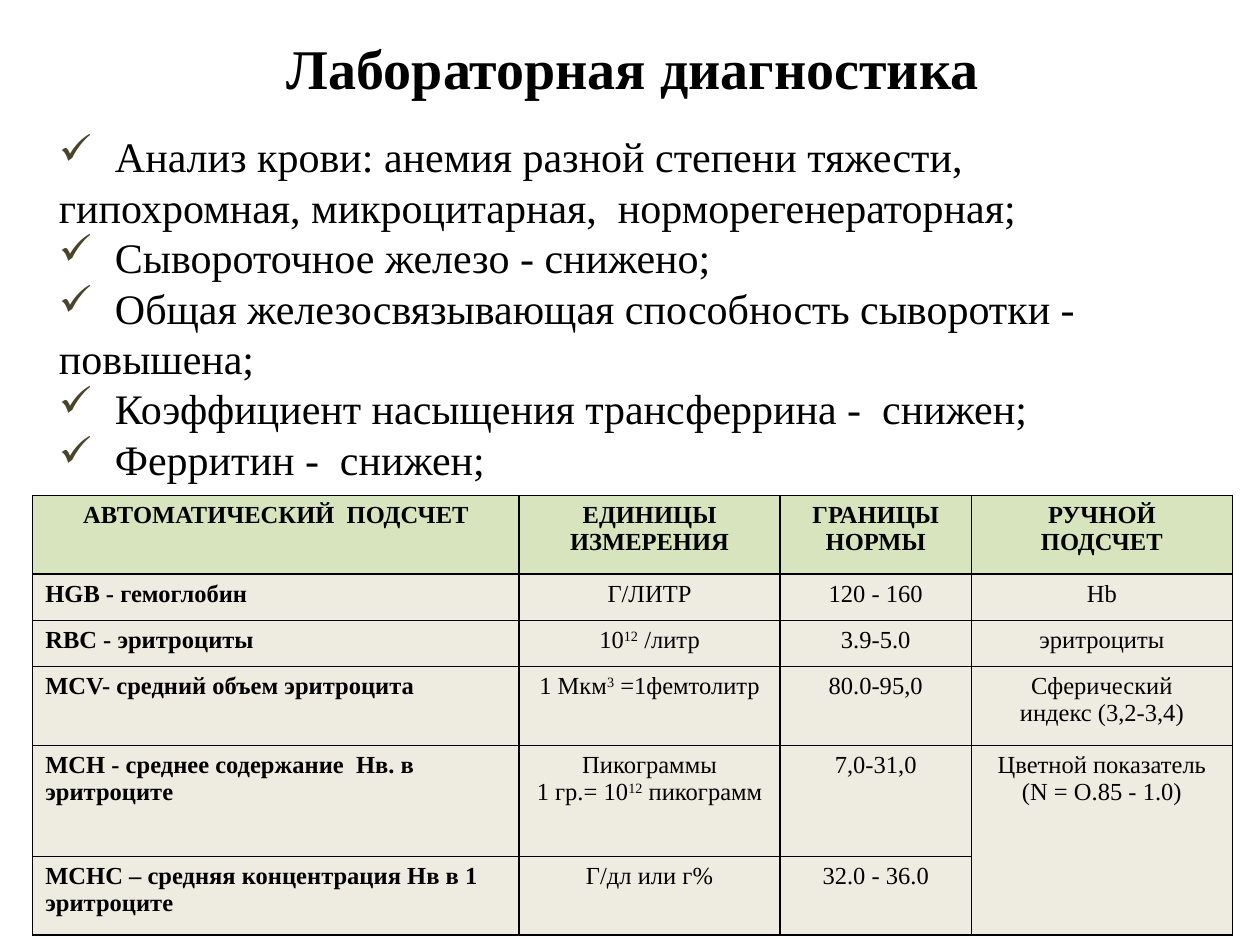
from lxml import etree
from pptx import Presentation
from pptx.dml.color import RGBColor
from pptx.enum.text import MSO_ANCHOR, PP_ALIGN
from pptx.oxml.ns import qn
from pptx.util import Pt

LEFT, CENTER = PP_ALIGN.LEFT, PP_ALIGN.CENTER
TOP, MIDDLE = MSO_ANCHOR.TOP, MSO_ANCHOR.MIDDLE
TITLE_ONLY = 5

THEME = {
    "font": "Times New Roman",
    "ink": "000000",
    "check": "4A452A",
    "header_fill": "D7E4BD",
    "body_fill": "EEECE1",
    "title_size": 32,
    "finding_size": 24,
    "table_size": 14,
    "border": 1,
}

TITLE = "Лабораторная диагностика"
FINDINGS = [
    "Анализ крови: анемия разной степени тяжести, гипохромная, "
    "микроцитарная,  норморегенераторная;",
    "Сывороточное железо - снижено;",
    "Общая железосвязывающая способность сыворотки - повышена;",
    "Коэффициент насыщения трансферрина -  снижен;",
    "Ферритин -  снижен;",
]
# A line break starts a new paragraph; text between ^ marks is superscript.
INDICES = [
    ("АВТОМАТИЧЕСКИЙ  ПОДСЧЕТ", "ЕДИНИЦЫ\nИЗMEPЕНИЯ", "ГРАНИЦЫ\nНОРМЫ", "РУЧНОЙ\nПОДСЧЕТ"),
    ("НGВ - гемоглобин", "Г/ЛИТР", "120 - 160", "Нb"),
    ("RBC - эритроциты", "10^12^ /литр", "3.9-5.0", "эритроциты"),
    ("MCV- средний объем эритроцита", "1 Мкм^3^ =1фемтолитр", "80.0-95,0",
     "Сферический\nиндекс (3,2-3,4)"),
    ("МСН - среднее содержание  Нв. в эритроците",
     "Пикограммы\n1 гр.= 10^12^ пикограмм", "7,0-31,0",
     "Цветной показатель\n(N = О.85 - 1.0)"),
    ("МСНС – средняя концентрация Нв в 1 эритроците", "Г/дл или г%", "32.0 - 36.0", ""),
]
COLUMN_WIDTHS = [278, 149, 109.5, 149]
ROW_HEIGHTS = [45, 26.5, 26.5, 45, 63.5, 45]
MERGED = ((4, 3), (5, 3))

TITLE_BOX = (154.8, 15.1, 414, 46.1)
FINDINGS_BOX = (26.6, 71.3, 668.9, 211)
TABLE_CORNER = (18.7, 283)
CHECK_GAP = 32


def points(values):
    return [Pt(value) for value in values]


def apply(target, values):
    for name, value in values.items():
        setattr(target, name, value)


def write(paragraph, text, size, bold=False, align=LEFT):
    paragraph.alignment = align
    for index, piece in enumerate(text.split("^")):
        run = paragraph.add_run()
        run.text = piece
        apply(run.font, {"name": THEME["font"], "size": Pt(size), "bold": bold})
        run.font.color.rgb = RGBColor.from_string(THEME["ink"])
        if index % 2:
            run.font._element.set("baseline", "30000")


def add_check(paragraph):
    """Start the first line with a check mark; later lines return to the margin."""
    props = paragraph._p.get_or_add_pPr()
    apply_attributes = {"marL": "0", "indent": "0"}
    for name, value in apply_attributes.items():
        props.set(name, value)
    colour = etree.SubElement(props, qn("a:buClr"))
    etree.SubElement(colour, qn("a:srgbClr"), val=THEME["check"])
    etree.SubElement(props, qn("a:buChar"), char="✓")
    tabs = etree.SubElement(props, qn("a:tabLst"))
    etree.SubElement(tabs, qn("a:tab"), pos=str(Pt(CHECK_GAP)), algn="l")


def add_borders(cell):
    props = cell._tc.get_or_add_tcPr()
    for index, side in enumerate(("lnL", "lnR", "lnT", "lnB")):
        line = etree.Element(qn(f"a:{side}"), w=str(Pt(THEME["border"])))
        fill = etree.SubElement(line, qn("a:solidFill"))
        etree.SubElement(fill, qn("a:srgbClr"), val=THEME["ink"])
        props.insert(index, line)


def add_title(slide):
    title = slide.shapes.title
    apply(title, dict(zip(("left", "top", "width", "height"), points(TITLE_BOX))))
    apply(title.text_frame, {"word_wrap": False, "vertical_anchor": MIDDLE})
    write(title.text_frame.paragraphs[0], TITLE, THEME["title_size"], True, CENTER)


def add_findings(slide):
    frame = slide.shapes.add_textbox(*points(FINDINGS_BOX)).text_frame
    apply(frame, {"word_wrap": True, "vertical_anchor": TOP})
    for index, finding in enumerate(FINDINGS):
        paragraph = frame.add_paragraph() if index else frame.paragraphs[0]
        add_check(paragraph)
        write(paragraph, "\t" + finding, THEME["finding_size"])


def add_indices(slide):
    size = sum(COLUMN_WIDTHS), sum(ROW_HEIGHTS)
    table = slide.shapes.add_table(
        len(ROW_HEIGHTS), len(COLUMN_WIDTHS), *points(TABLE_CORNER + size)).table
    apply(table, {"first_row": False, "horz_banding": False})
    for column, width in zip(table.columns, COLUMN_WIDTHS):
        column.width = Pt(width)
    for row, height in zip(table.rows, ROW_HEIGHTS):
        row.height = Pt(height)
    start, end = MERGED
    table.cell(*start).merge(table.cell(*end))
    for r, entries in enumerate(INDICES):
        for c, entry in enumerate(entries):
            cell = table.cell(r, c)
            cell.fill.solid()
            fill = THEME["body_fill" if r else "header_fill"]
            cell.fill.fore_color.rgb = RGBColor.from_string(fill)
            add_borders(cell)
            align = LEFT if r and c == 0 else CENTER
            for index, text in enumerate(entry.split("\n")):
                frame = cell.text_frame
                paragraph = frame.add_paragraph() if index else frame.paragraphs[0]
                write(paragraph, text, THEME["table_size"], r == 0 or c == 0, align)


def main():
    deck = Presentation()
    apply(deck, {"slide_width": Pt(720), "slide_height": Pt(540)})
    slide = deck.slides.add_slide(deck.slide_layouts[TITLE_ONLY])
    add_title(slide)
    add_findings(slide)
    add_indices(slide)
    deck.save("out.pptx")


if __name__ == "__main__":
    main()
